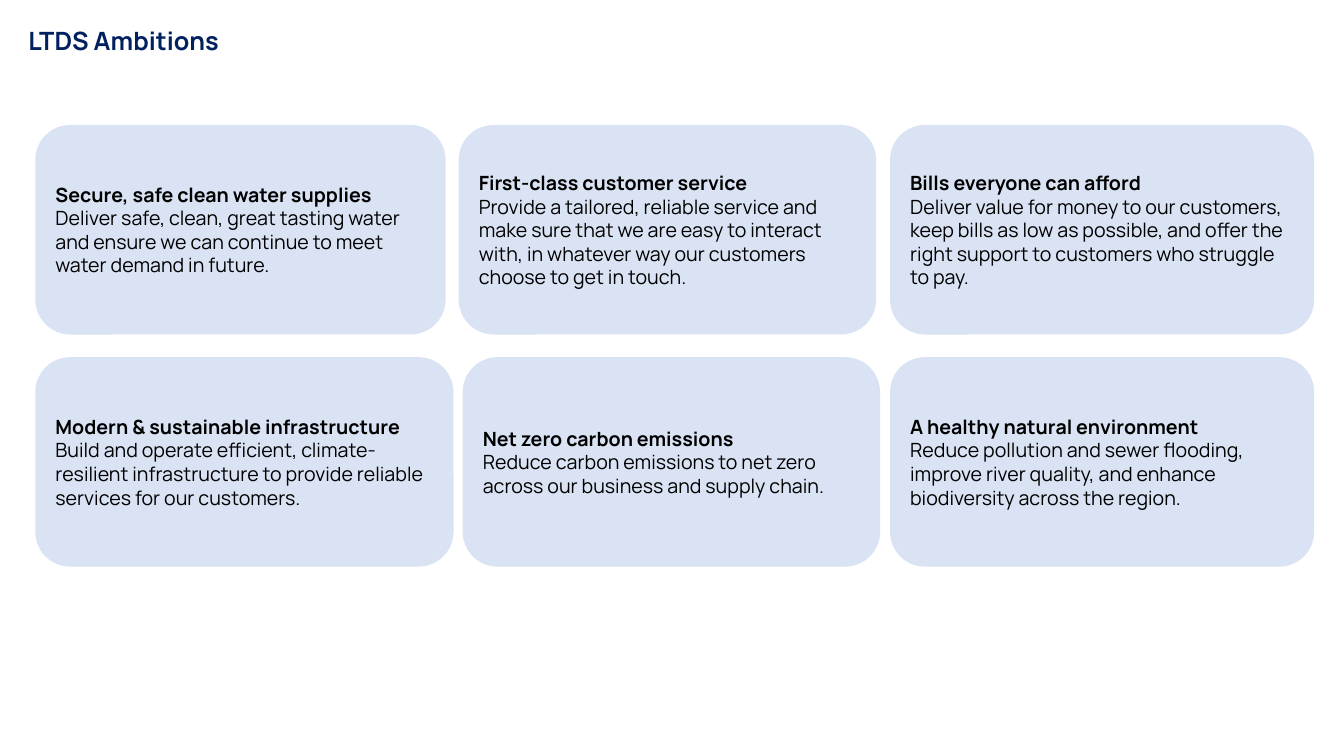
from pptx import Presentation
from pptx.dml.color import RGBColor
from pptx.enum.shapes import MSO_SHAPE
from pptx.enum.text import MSO_ANCHOR, MSO_AUTO_SIZE, PP_ALIGN
from pptx.util import Cm, Pt

ROUND = MSO_SHAPE.ROUNDED_RECTANGLE
MIDDLE = MSO_ANCHOR.MIDDLE
LEFT = PP_ALIGN.LEFT
FIXED = MSO_AUTO_SIZE.NONE
FONT = "Manrope"
COLORS = {"title": "002060", "card": "DAE3F3", "text": "000000"}


def style(par, size, color, bold):
    par.alignment = LEFT
    par.font.name = FONT
    par.font.size = Pt(size)
    par.font.bold = bold
    par.font.color.rgb = RGBColor.from_string(COLORS[color])


prs = Presentation()
prs.slide_width = Cm(33.87)
prs.slide_height = Cm(19.05)
slide = prs.slides.add_slide(prs.slide_layouts[5])

# Title
title = slide.shapes.title
title.left, title.top = Cm(0.46), Cm(0.51)
title.width, title.height = Cm(16.94), Cm(1.02)
frame = title.text_frame
frame.text = "LTDS Ambitions"
frame.auto_size = FIXED
frame.vertical_anchor = MIDDLE
style(frame.paragraphs[0], 18, "title", True)

# Ambition cards: left, width, heading, body
rows = [
    [
        (0.89, 10.34, "Secure, safe clean water supplies",
         "Deliver safe, clean, great tasting water and ensure we can "
         "continue to meet water demand in future."),
        (11.56, 10.52, "First-class customer service",
         "Provide a tailored, reliable service and make sure that we are easy "
         "to interact with, in whatever way our customers choose to get in touch."),
        (22.43, 10.69, "Bills everyone can afford",
         "Deliver value for money to our customers, keep bills as low as possible, "
         "and offer the right support to customers who struggle to pay."),
    ],
    [
        (0.89, 10.54, "Modern & sustainable infrastructure",
         "Build and operate efficient, climate-resilient infrastructure to "
         "provide reliable services for our customers."),
        (11.66, 10.52, "Net zero carbon emissions",
         "Reduce carbon emissions to net zero across our business and supply chain."),
        (22.43, 10.69, "A healthy natural environment",
         "Reduce pollution and sewer flooding, improve river quality, "
         "and enhance biodiversity across the region."),
    ],
]
TOP, HEIGHT, GAP = 3.15, 5.28, 0.57

for row, cards in enumerate(rows):
    top = TOP + row * (HEIGHT + GAP)
    for left, width, head, body in cards:
        card = slide.shapes.add_shape(ROUND, Cm(left), Cm(top), Cm(width), Cm(HEIGHT))
        card.shadow.inherit = False
        card.fill.solid()
        card.fill.fore_color.rgb = RGBColor.from_string(COLORS["card"])
        card.line.fill.background()
        frame = card.text_frame
        frame.word_wrap = True
        frame.vertical_anchor = MIDDLE
        frame.text = f"{head}\n{body}"
        for par, bold in zip(frame.paragraphs, (True, False)):
            style(par, 14, "text", bold)

prs.save("out.pptx")
